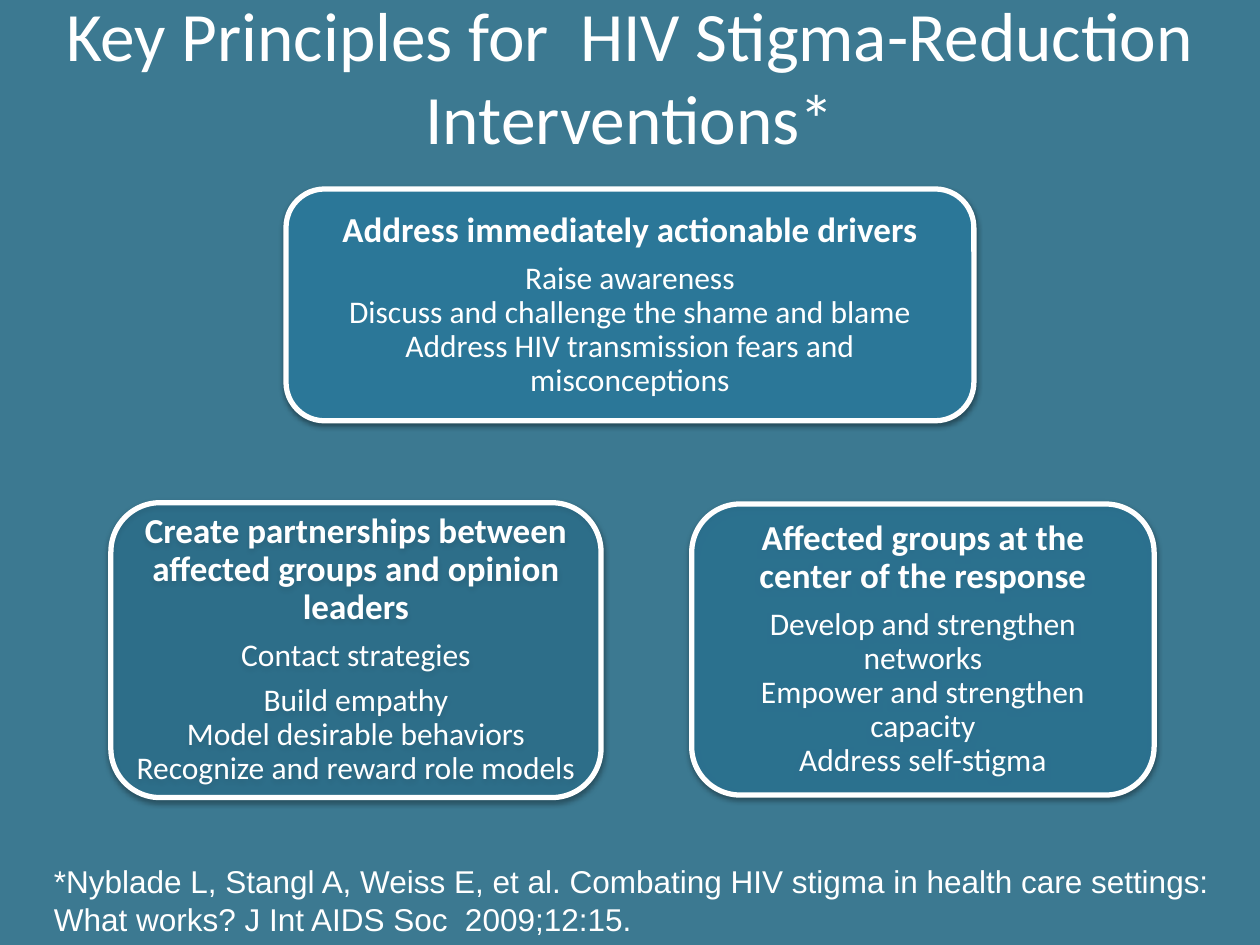
from lxml import etree
from pptx import Presentation
from pptx.dml.color import RGBColor
from pptx.enum.shapes import MSO_SHAPE as Shape
from pptx.enum.text import MSO_ANCHOR as Anchor, PP_ALIGN as Align
from pptx.oxml import parse_xml
from pptx.oxml.ns import nsdecls, qn
from pptx.util import Inches, Pt

WHITE = "FFFFFF"
BACKGROUND = "3C7991"
CARD_FILL = "2C7C9F"

SHADOW = (
    f'<a:effectLst {nsdecls("a")}>'
    '<a:outerShdw blurRad="40000" dist="20000" dir="5400000" rotWithShape="0">'
    '<a:srgbClr val="000000"><a:alpha val="38000"/></a:srgbClr>'
    '</a:outerShdw></a:effectLst>'
)

CARDS = [
    ((2.27, 1.5, 5.46, 1.84), 90, "Address immediately actionable drivers", [
        "Raise awareness\nDiscuss and challenge the shame and blame\n"
        "Address HIV transmission fears and misconceptions",
    ]),
    ((5.49, 4, 3.67, 2.31), 70, "Affected groups at the center of the response", [
        "Develop and strengthen networks\n"
        "Empower and strengthen capacity\nAddress self-stigma",
    ]),
    ((0.88, 3.99, 3.89, 2.34), 50,
     "Create partnerships between affected groups and opinion leaders", [
        "Contact strategies",
        "Build empathy\nModel desirable behaviors\n"
        "Recognize and reward role models",
    ]),
]


def color(hex_string):
    return RGBColor.from_string(hex_string)


def format_runs(para, font_name, size, bold=False):
    for span in para.runs:
        span.font.name = font_name
        span.font.size = Pt(size)
        span.font.bold = bold
        span.font.color.rgb = color(WHITE)


def add_text(page, place, text, font_name, size, align, anchor):
    box = page.shapes.add_textbox(*map(Inches, place))
    frame = box.text_frame
    frame.word_wrap = True
    frame.vertical_anchor = anchor
    frame.text = text
    para = frame.paragraphs[0]
    para.alignment = align
    format_runs(para, font_name, size)


def add_card_outline(page, place, opacity):
    card = page.shapes.add_shape(Shape.ROUNDED_RECTANGLE, *map(Inches, place))
    card.fill.solid()
    card.fill.fore_color.rgb = color(CARD_FILL)
    fill_color = card.fill._xPr.find(qn("a:solidFill"))[0]
    etree.SubElement(fill_color, qn("a:alpha"), val=str(opacity * 1000))
    card.line.color.rgb = color(WHITE)
    card.line.width = Pt(3)
    card._element.spPr.append(parse_xml(SHADOW))
    return card


def add_card(page, place, opacity, heading, details):
    frame = add_card_outline(page, place, opacity).text_frame
    frame.word_wrap = True
    frame.vertical_anchor = Anchor.MIDDLE
    frame.margin_left = frame.margin_right = Inches(0.08)
    frame.margin_top = frame.margin_bottom = Inches(0.08)
    for index, text in enumerate([heading, *details]):
        is_heading = index == 0
        size = 20 if is_heading else 18
        para = frame.paragraphs[0] if is_heading else frame.add_paragraph()
        para.text = text
        para.alignment = Align.CENTER
        para.line_spacing = 0.9
        para.space_after = Pt(0.35 * size if index < 2 else 0)
        format_runs(para, "Calibri", size, is_heading)


def main():
    deck = Presentation()
    deck.slide_width = Inches(10)
    deck.slide_height = Inches(7.5)
    page = deck.slides.add_slide(deck.slide_layouts[6])
    page.background.fill.solid()
    page.background.fill.fore_color.rgb = color(BACKGROUND)

    add_text(page, (0, 0.1, 10, 1),
             "Key Principles for  HIV Stigma-Reduction Interventions*",
             "Calibri", 39.6, Align.CENTER, Anchor.MIDDLE)
    for card in CARDS:
        add_card(page, *card)
    add_text(page, (0.33, 6.79, 9.67, 0.71),
             "*Nyblade L, Stangl A, Weiss E, et al. Combating HIV stigma in health "
             "care settings: What works? J Int AIDS Soc  2009;12:15.",
             "Arial", 18, Align.LEFT, Anchor.TOP)
    deck.save("out.pptx")


if __name__ == "__main__":
    main()
